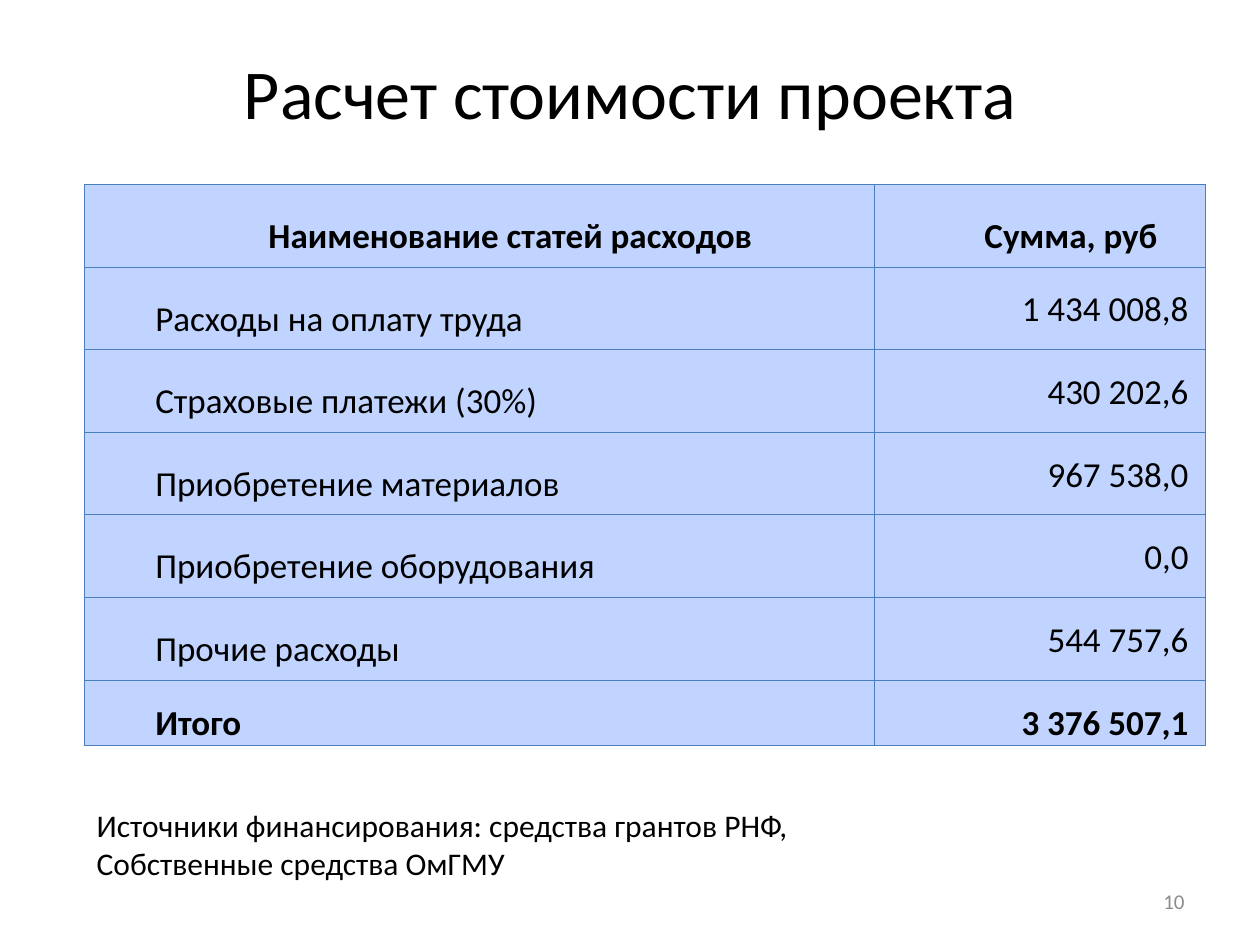
"""Build the project cost slide with its table of expenses."""
from lxml import etree
from pptx import Presentation
from pptx.dml.color import RGBColor
from pptx.enum import text
from pptx.oxml import ns
from pptx.util import Cm, Pt

COLORS = {"text": "000000", "number": "8C8C8C", "cell": "C0D4FF", "border": "4B7EBC"}
FONT = "Calibri"
ALIGN = text.PP_ALIGN
ANCHOR = text.MSO_ANCHOR

HEADER = ("Наименование статей расходов", "Сумма, руб")
EXPENSES = [
    ("Расходы на оплату труда", "1 434 008,8 "),
    ("Страховые платежи (30%)", "430 202,6 "),
    ("Приобретение материалов", "967 538,0 "),
    ("Приобретение оборудования", "0,0 "),
    ("Прочие расходы", "544 757,6 "),
]
TOTAL = ("Итого", "3 376 507,1 ")
SOURCES = "Источники финансирования: средства грантов РНФ,\nСобственные средства ОмГМУ"


def format_text(tf, size, color="text", bold=False, align=ALIGN.LEFT):
    """Format every paragraph and run of a text frame."""
    for p in tf.paragraphs:
        p.alignment = align
        for r in p.runs:
            r.font.name = FONT
            r.font.size = Pt(size)
            r.font.bold = bold
            r.font.color.rgb = RGBColor.from_string(COLORS[color])


def add_title(s, title):
    """Fill and place the title placeholder."""
    sp = s.shapes.title
    sp.left, sp.top, sp.width, sp.height = Cm(1.27), Cm(0.76), Cm(22.86), Cm(2.16)
    sp.text_frame.text = title
    sp.text_frame.vertical_anchor = ANCHOR.MIDDLE
    format_text(sp.text_frame, 40, align=ALIGN.CENTER)


def add_text(s, content, box, size, anchor=ANCHOR.TOP, **style):
    """Add a wrapped text box."""
    tf = s.shapes.add_textbox(*map(Cm, box)).text_frame
    tf.word_wrap = True
    tf.vertical_anchor = anchor
    tf.text = content
    format_text(tf, size, **style)


def set_borders(cell):
    """Draw a thin line on all four sides of a cell."""
    tcPr = cell._tc.get_or_add_tcPr()
    for i, side in enumerate(("a:lnL", "a:lnR", "a:lnT", "a:lnB")):
        ln = etree.Element(ns.qn(side), w=str(Pt(0.75)))
        fill = etree.SubElement(ln, ns.qn("a:solidFill"))
        etree.SubElement(fill, ns.qn("a:srgbClr"), val=COLORS["border"])
        tcPr.insert(i, ln)


def fill_cell(cell, content, anchor, align, bold):
    """Write one table cell with its fill, borders and indent."""
    cell.text = content
    cell.vertical_anchor = anchor
    cell.margin_left = cell.margin_right = Cm(0.18)
    cell.margin_top = cell.margin_bottom = 0
    cell.fill.solid()
    cell.fill.fore_color.rgb = RGBColor.from_string(COLORS["cell"])
    set_borders(cell)
    format_text(cell.text_frame, 20, bold=bold, align=align)
    p = cell.text_frame.paragraphs[0]
    p.line_spacing = 1.5
    p._p.get_or_add_pPr().set("indent", str(Cm(1.25)))


def add_cost_table(s):
    """Add the table of expenses with a header and a total row."""
    rows = [HEADER, *EXPENSES, TOTAL]
    last = len(rows) - 1
    frame = s.shapes.add_table(len(rows), 2, Cm(1.7), Cm(3.72), Cm(22.6), Cm(11.3))
    table = frame.table
    table.horz_banding = table.first_row = False
    for column, width in zip(table.columns, (15.93, 6.67)):
        column.width = Cm(width)
    for i, row in enumerate(rows):
        table.rows[i].height = Cm(1.31 if i == last else 1.665)
        for j, content in enumerate(row):
            align = ALIGN.RIGHT if j else ALIGN.LEFT
            anchor = ANCHOR.TOP if j else ANCHOR.MIDDLE
            if i == 0:
                align, anchor = ALIGN.CENTER, ANCHOR.MIDDLE
            elif i == last:
                anchor = ANCHOR.BOTTOM
            fill_cell(table.cell(i, j), content, anchor, align, i in (0, last))


def main():
    """Build and save the slide."""
    prs = Presentation()
    prs.slide_width, prs.slide_height = Cm(25.4), Cm(19.05)
    s = prs.slides.add_slide(prs.slide_layouts[5])
    add_text(s, "10", (18.2, 17.66, 5.93, 1.01), 12, ANCHOR.MIDDLE,
             color="number", align=ALIGN.RIGHT)
    add_cost_table(s)
    add_title(s, "Расчет стоимости проекта")
    add_text(s, SOURCES, (1.7, 16.13, 22.6, 2.57), 18)
    prs.save("out.pptx")


if __name__ == "__main__":
    main()
